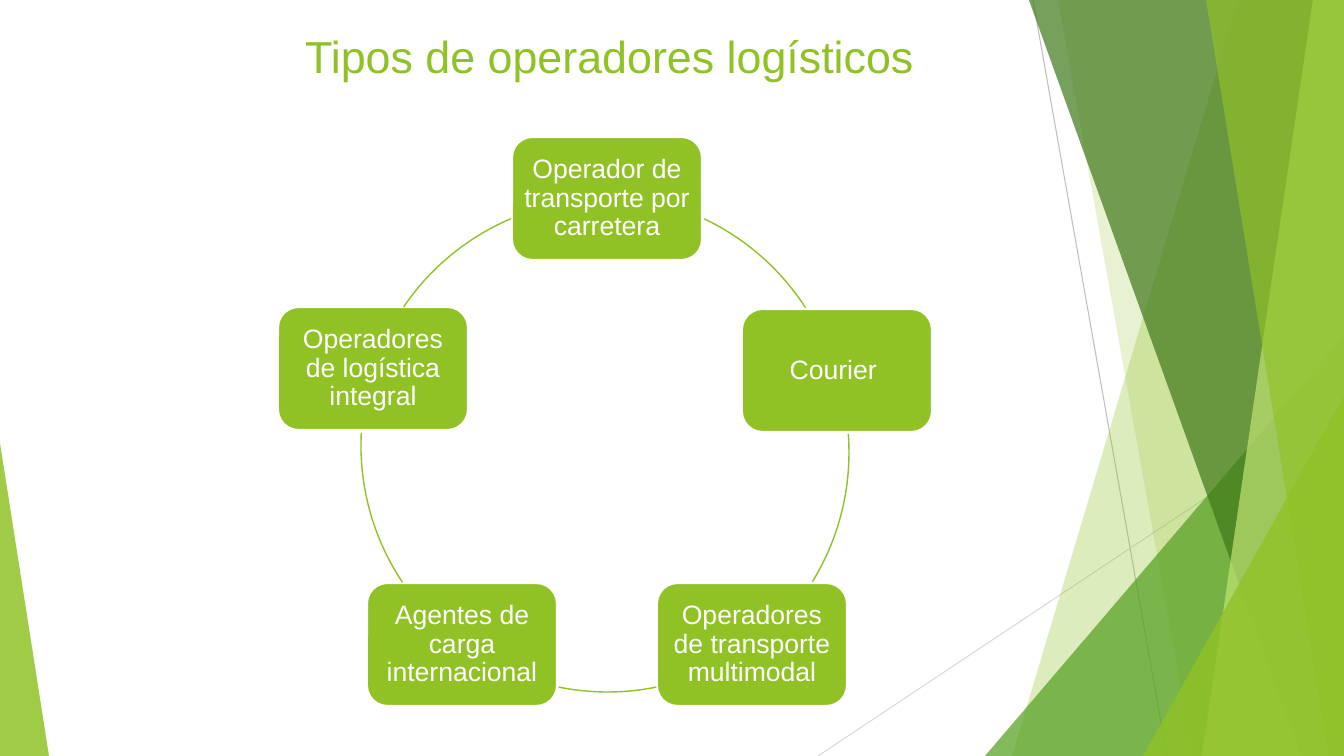
from lxml import etree
from pptx import Presentation
from pptx import util as u
from pptx.dml.color import RGBColor
from pptx.enum import shapes, text
from pptx.oxml.ns import qn

EMU_PER_PX = 914400 / 100.8
WIDTH, HEIGHT = 1344, 756
FONT = "Arial"

LIME = RGBColor(0x90, 0xC2, 0x26)
GREEN = RGBColor(0x54, 0xA0, 0x21)
FOREST = RGBColor(0x3F, 0x78, 0x19)
PALE = RGBColor(0xC0, 0xE4, 0x74)
GREY = RGBColor(0xBF, 0xBF, 0xBF)
LIGHT_GREY = RGBColor(0xD9, 0xD9, 0xD9)
WHITE = RGBColor(0xFF, 0xFF, 0xFF)

TITLE = "Tipos de operadores logísticos"
TITLE_BOX = (295, 26, 636, 60)

# text, left, top
OPERATORS = [
    ("Operador de transporte por carretera", 512, 137),
    ("Courier ", 742, 309),
    ("Operadores de transporte multimodal", 657, 583),
    ("Agentes de carga internacional", 367, 583),
    ("Operadores de logística integral", 278, 307),
]
NODE_SIZE = (190, 123)
NODE_SIDE_MARGIN, NODE_END_MARGIN = 5, 8

# circle left, circle top, start and end in degrees clockwise from the right
ARCS = [
    (352, 195, 295.4, 327.2),
    (356, 206, 355.7, 31.6),
    (361, 199, 78.6, 101.4),
    (361, 199, 146.3, 182.9),
    (361, 199, 214.2, 246.9),
]
RING_SIZE = 493

THIN_LINES = [
    ((1033, 0), (1167, HEIGHT), GREY),
    ((WIDTH, 406), (818, HEIGHT), LIGHT_GREY),
]
# Facets reach the right edge: left end at the top, left end at the bottom, colour, opacity
# Triangles stand on the bottom edge: left, top, width, apex position, colour, opacity
DECOR = [
    ("facet", 1238, 1012, LIME, 30),
    ("facet", 1058, 1193, LIME, 20),
    ("triangle", 985, 336, 359, 1, GREEN, 72),
    ("facet", 1029, 1301, FOREST, 70),
    ("facet", 1313, 1202, PALE, 70),
    ("facet", 1206, 1329, LIME, 65),
    ("triangle", 1143, 396, 201, 1, LIME, 80),
    ("triangle", 0, 443, 49, 0, LIME, 85),
]


def px(*lengths):
    return [u.Emu(round(length * EMU_PER_PX)) for length in lengths]


def paint(shape, color, opacity=100):
    shape.shadow.inherit = False
    shape.fill.solid()
    shape.fill.fore_color.rgb = color
    if opacity < 100:
        rgb = shape.fill._xPr.find(".//" + qn("a:srgbClr"))
        etree.SubElement(rgb, qn("a:alpha"), val=str(opacity * 1000))


def style_text(frame, size, color, align):
    frame.word_wrap = True
    frame.auto_size = text.MSO_AUTO_SIZE.NONE
    frame.vertical_anchor = text.MSO_ANCHOR.MIDDLE
    paragraph = frame.paragraphs[0]
    paragraph.alignment = align
    font = paragraph.runs[0].font
    font.name, font.size, font.color.rgb = FONT, u.Pt(size), color


def add_thin_line(slide, start, end, color):
    line = slide.shapes.add_connector(shapes.MSO_CONNECTOR.STRAIGHT, *px(*start, *end))
    line.line.color.rgb = color
    line.line.width = u.Pt(0.75)
    etree.SubElement(line._element.spPr, qn("a:effectLst"))


def add_facet(slide, top_left, bottom_left, color, opacity):
    outline = slide.shapes.build_freeform(top_left, 0, scale=EMU_PER_PX)
    outline.add_line_segments([(WIDTH, 0), (WIDTH, HEIGHT), (bottom_left, HEIGHT)])
    facet = outline.convert_to_shape()
    paint(facet, color, opacity)
    facet.line.fill.background()


def add_triangle(slide, left, top, width, apex, color, opacity):
    triangle = slide.shapes.add_shape(
        shapes.MSO_SHAPE.ISOSCELES_TRIANGLE, *px(left, top, width, HEIGHT - top))
    triangle.adjustments[0] = apex
    paint(triangle, color, opacity)
    triangle.line.fill.background()


def add_node(slide, label, left, top):
    node = slide.shapes.add_shape(
        shapes.MSO_SHAPE.ROUNDED_RECTANGLE, *px(left, top, *NODE_SIZE))
    paint(node, LIME)
    node.line.color.rgb = WHITE
    node.line.width = u.Pt(1.5)
    frame = node.text_frame
    frame.text = label
    style_text(frame, 19, WHITE, text.PP_ALIGN.CENTER)
    frame.paragraphs[0].line_spacing = 0.9
    side, end = px(NODE_SIDE_MARGIN, NODE_END_MARGIN)
    frame.margin_left = frame.margin_right = side
    frame.margin_top = frame.margin_bottom = end


def add_arc(slide, left, top, start, end):
    arc = slide.shapes.add_shape(
        shapes.MSO_SHAPE.ARC, *px(left, top, RING_SIZE, RING_SIZE))
    arc.shadow.inherit = False
    # Angles are stored in 60000ths of a degree, adjustments in 100000ths
    for index, degrees in enumerate((start, end)):
        arc.adjustments[index] = degrees * 0.6
    arc.fill.background()
    arc.line.color.rgb = LIME
    arc.line.width = u.Pt(1)


def main():
    deck = Presentation()
    deck.slide_width, deck.slide_height = px(WIDTH, HEIGHT)
    slide = deck.slides.add_slide(deck.slide_layouts[5])

    for thin_line in THIN_LINES:
        add_thin_line(slide, *thin_line)
    draw = {"facet": add_facet, "triangle": add_triangle}
    for kind, *details in DECOR:
        draw[kind](slide, *details)

    title = slide.shapes.title
    title.left, title.top, title.width, title.height = px(*TITLE_BOX)
    title.text_frame.text = TITLE
    style_text(title.text_frame, 32, LIME, text.PP_ALIGN.LEFT)
    slide.shapes._spTree.append(title._element)  # in front of the decoration

    for operator, arc in zip(OPERATORS, ARCS):
        add_node(slide, *operator)
        add_arc(slide, *arc)

    deck.save("out.pptx")


if __name__ == "__main__":
    main()
